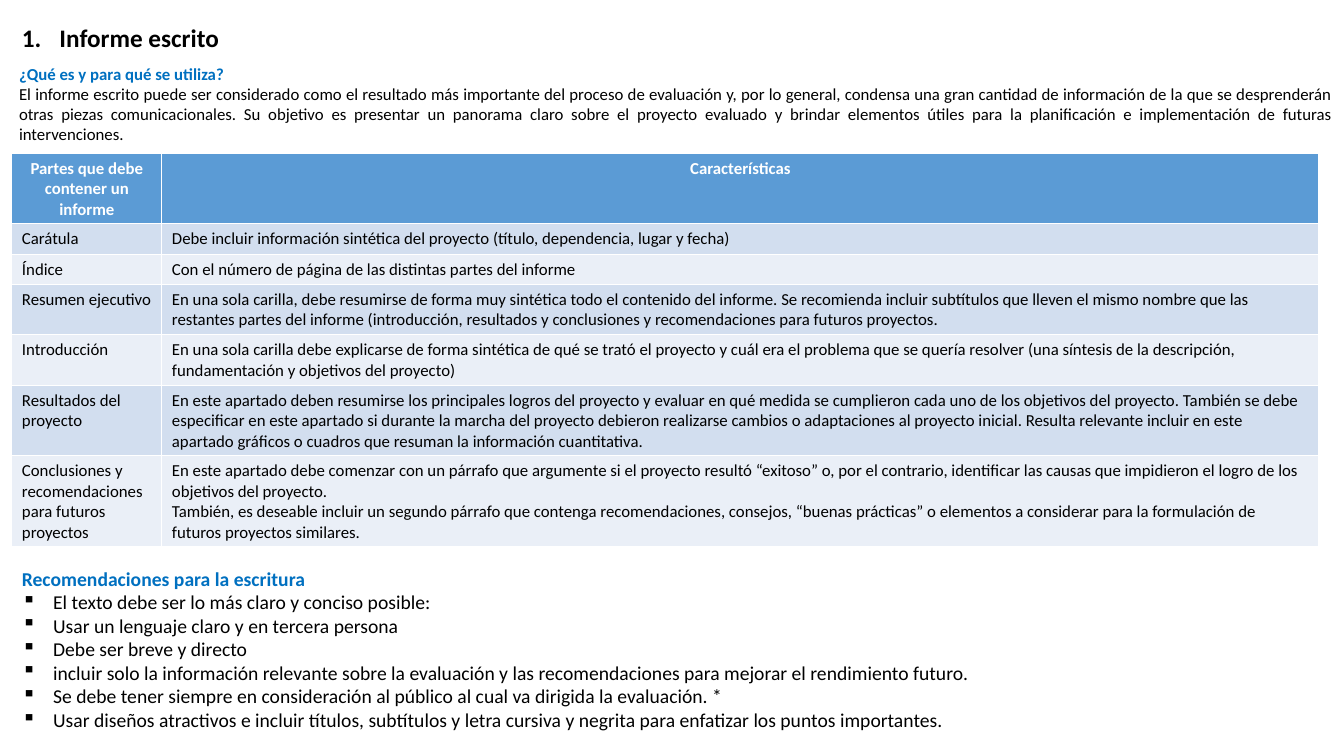
from lxml.etree import SubElement
from pptx import Presentation
from pptx.dml.color import RGBColor
from pptx.enum.text import PP_ALIGN as Align
from pptx.oxml.ns import qn
from pptx.util import Cm, Pt

COLORS = {
    "text": "000000",
    "heading": "0070C0",
    "header_text": "FFFFFF",
    "header_fill": "5B9BD5",
    "odd_row": "D2DEEF",
    "even_row": "EAEFF7",
}


def write(text_frame, lines, size, color, bold=False, align=Align.LEFT):
    text_frame.word_wrap = True
    text_frame.text = "\n".join(lines)
    for paragraph in text_frame.paragraphs:
        paragraph.alignment = align
        for run in paragraph.runs:
            run.font.name = "Calibri"
            run.font.size = Pt(size)
            run.font.bold = bold
            run.font.color.rgb = RGBColor.from_string(COLORS[color])


def add_bullet(paragraph, indent, tag, **attributes):
    properties = paragraph._p.get_or_add_pPr()
    properties.set("marL", str(Cm(indent)))
    properties.set("indent", str(-Cm(indent)))
    SubElement(properties, qn(tag), **attributes)


presentation = Presentation()
presentation.slide_width = Cm(33.87)
presentation.slide_height = Cm(19.05)
slide = presentation.slides.add_slide(presentation.slide_layouts[6])

title = slide.shapes.add_textbox(Cm(0.3), Cm(0.43), Cm(5.51), Cm(1.02)).text_frame
write(title, ["Informe escrito"], 18, "text", bold=True)
title.word_wrap = False
add_bullet(title.paragraphs[0], 0.95, "a:buAutoNum", type="arabicPeriod")

intro = slide.shapes.add_textbox(Cm(0.23), Cm(1.47), Cm(33.63), Cm(10)).text_frame
intro_lines = [
    "¿Qué es y para qué se utiliza?",
    "El informe escrito puede ser considerado como el resultado más importante del proceso de evaluación y, "
    "por lo general, condensa una gran cantidad de información de la que se desprenderán otras piezas "
    "comunicacionales. Su objetivo es presentar un panorama claro sobre el proyecto evaluado y brindar "
    "elementos útiles para la planificación e implementación de futuras intervenciones.",
]
write(intro, intro_lines, 12, "text", align=Align.JUSTIFY)

report_parts = [
    (3, "Partes que debe contener un informe", ["Características"]),
    (1, "Carátula", ["Debe incluir información sintética del proyecto (título, dependencia, lugar y fecha)"]),
    (1, "Índice", ["Con el número de página de las distintas partes del informe"]),
    (2, "Resumen ejecutivo", [
        "En una sola carilla, debe resumirse de forma muy sintética todo el contenido del informe. "
        "Se recomienda incluir subtítulos que lleven el mismo nombre que las restantes partes del informe "
        "(introducción, resultados y conclusiones y recomendaciones para futuros proyectos."]),
    (2, "Introducción", [
        "En una sola carilla debe explicarse de forma sintética de qué se trató el proyecto y cuál era el "
        "problema que se quería resolver (una síntesis de la descripción, fundamentación y objetivos del "
        "proyecto)"]),
    (3, "Resultados del proyecto", [
        "En este apartado deben resumirse los principales logros del proyecto y evaluar en qué medida se "
        "cumplieron cada uno de los objetivos del proyecto. También se debe especificar en este apartado si "
        "durante la marcha del proyecto debieron realizarse cambios o adaptaciones al proyecto inicial. "
        "Resulta relevante incluir en este apartado gráficos o cuadros que resuman la información "
        "cuantitativa."]),
    (4, "Conclusiones y recomendaciones para futuros proyectos", [
        "En este apartado debe comenzar con un párrafo que argumente si el proyecto resultó “exitoso” o, por "
        "el contrario, identificar las causas que impidieron el logro de los objetivos del proyecto.",
        "También, es deseable incluir un segundo párrafo que contenga recomendaciones, consejos, “buenas "
        "prácticas” o elementos a considerar para la formulación de futuros proyectos similares."]),
]
table = slide.shapes.add_table(len(report_parts), 2, Cm(0.3), Cm(3.86), Cm(32.94), Cm(9.91)).table
table.columns[0].width = Cm(3.78)
table.columns[1].width = Cm(29.16)
for index, (line_count, part, features) in enumerate(report_parts):
    table.rows[index].height = Cm(0.25 + 0.51 * line_count)
    for column, lines in enumerate([[part], features]):
        cell = table.cell(index, column)
        if index == 0:
            fill = "header_fill"
            write(cell.text_frame, lines, 12, "header_text", bold=True, align=Align.CENTER)
        else:
            fill = "odd_row" if index % 2 else "even_row"
            write(cell.text_frame, lines, 12, "text")
        cell.fill.solid()
        cell.fill.fore_color.rgb = RGBColor.from_string(COLORS[fill])

advice = slide.shapes.add_textbox(Cm(0.3), Cm(14.15), Cm(30.35), Cm(4.45)).text_frame
advice_lines = [
    "Recomendaciones para la escritura",
    "El texto debe ser lo más claro y conciso posible:",
    "Usar un lenguaje claro y en tercera persona",
    "Debe ser breve y directo",
    "incluir solo la información relevante sobre la evaluación y las recomendaciones para mejorar el "
    "rendimiento futuro.",
    "Se debe tener siempre en consideración al público al cual va dirigida la evaluación. *",
    "Usar diseños atractivos e incluir títulos, subtítulos y letra cursiva y negrita para enfatizar los "
    "puntos importantes.",
]
write(advice, advice_lines, 14, "text")
for paragraph in advice.paragraphs[1:]:
    add_bullet(paragraph, 0.79, "a:buChar", char="▪")

for text_frame in (intro, advice):
    heading = text_frame.paragraphs[0].runs[0].font
    heading.bold = True
    heading.color.rgb = RGBColor.from_string(COLORS["heading"])

presentation.save("out.pptx")
